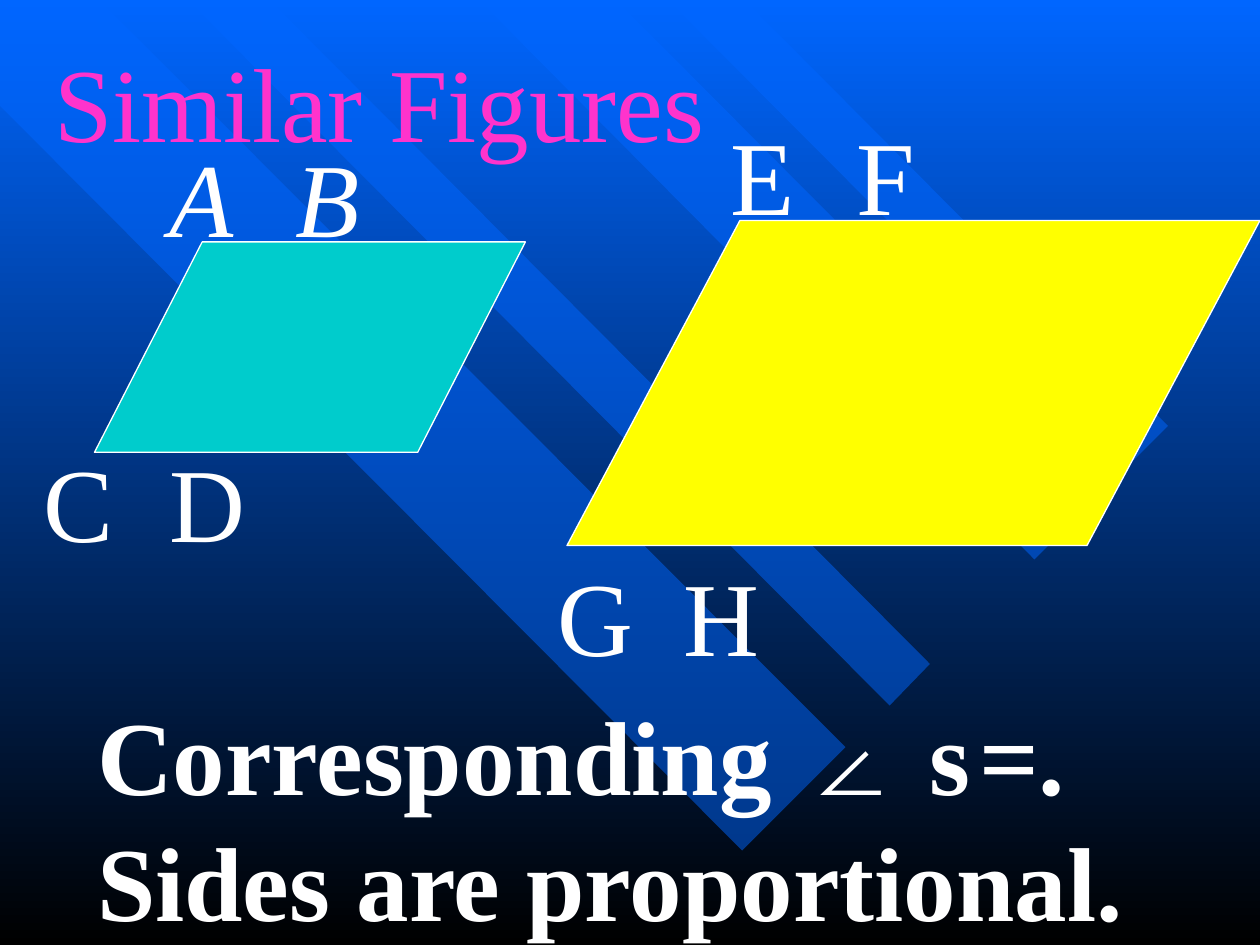
from pptx import Presentation
from pptx.dml.color import RGBColor
from pptx.enum.shapes import MSO_SHAPE
from pptx.enum.text import MSO_ANCHOR, MSO_AUTO_SIZE, PP_ALIGN
from pptx.oxml.ns import qn
from pptx.util import Inches, Pt
from lxml.etree import SubElement

BLUE = RGBColor(0x00, 0x66, 0xFF)
BLACK = RGBColor(0x00, 0x00, 0x00)
PINK = RGBColor(0xFF, 0x33, 0xCC)
TEAL = RGBColor(0x00, 0xCC, 0xCC)
YELLOW = RGBColor(0xFF, 0xFF, 0x00)
WHITE = RGBColor(0xFF, 0xFF, 0xFF)

BANDS = [
    [(6.71, 5.93), (0.79, 0), (0, 0), (0, 0.84), (5.89, 6.75)],
    [(2.14, 0), (7.38, 5.27), (7.06, 5.6), (1.49, 0)],
    [(4.89, 0), (8.76, 3.89), (8.21, 4.44), (3.8, 0)],
    [(5.3, 0), (8.97, 3.68), (9.27, 3.38), (5.91, 0)],
]
LABELS = [
    ("A\tB", (1.25, 1, 3.3, 1.1), 2.59, True),
    ("C\tD", (0.25, 3.42, 3.44, 1.1), 2.64, False),
    ("E\tF", (5.7, 0.83, 4.3, 1.1), 3.63, False),
    ("G\tH", (4.33, 4.33, 4.74, 1.1), 3.94, False),
]


class Painter:
    font = "Times New Roman"
    size = Pt(60)

    def __init__(self, slide):
        self.slide = slide
        self.shapes = slide.shapes

    def backdrop(self, top, base):
        fill = self.slide.background.fill
        fill.gradient()
        fill.gradient_angle = 270
        for stop, color, place in zip(fill.gradient_stops, (top, base), (0, 1)):
            stop.color.rgb = color
            stop.position = place

    def band(self, points):
        spots = [(Inches(x), Inches(y)) for x, y in points]
        pen = self.shapes.build_freeform(*spots[0])
        pen.add_line_segments(spots[1:], close=True)
        shape = pen.convert_to_shape()
        shape.shadow.inherit = False
        shape.fill.solid()
        shape.fill.fore_color.rgb = BLUE
        shape.line.fill.background()
        color = shape._element.spPr.find(qn("a:solidFill"))[0]
        SubElement(color, qn("a:alpha"), val="50000")

    def figure(self, box, skew, color):
        shape = self.shapes.add_shape(MSO_SHAPE.PARALLELOGRAM, *map(Inches, box))
        shape.adjustments[0] = skew
        shape.shadow.inherit = False
        shape.fill.solid()
        shape.fill.fore_color.rgb = color
        shape.line.color.rgb = WHITE
        shape.line.width = Pt(0.75)

    def letter(self, shape, lines, color=WHITE, bold=False, slant=False, tab=None):
        frame = shape.text_frame
        frame.word_wrap = True
        frame.auto_size = MSO_AUTO_SIZE.NONE
        frame.vertical_anchor = MSO_ANCHOR.TOP
        frame.margin_right = 0
        for spot, line in enumerate(lines):
            para = frame.add_paragraph() if spot else frame.paragraphs[0]
            para.alignment = PP_ALIGN.LEFT
            para.line_spacing = 1.0
            para.space_before = Pt(0)
            props = para._p.get_or_add_pPr()
            props.set("marL", "0")
            props.set("indent", "0")
            SubElement(props, qn("a:buNone"))
            if tab:
                stops = SubElement(props, qn("a:tabLst"))
                SubElement(stops, qn("a:tab"), pos=str(Inches(tab)), algn="l")
            run = para.add_run()
            run.text = line
            font = run.font
            font.name, font.size = self.font, self.size
            font.bold, font.italic = bold, slant
            font.color.rgb = color

    def holder(self, shape, box, lines, **style):
        shape.left, shape.top, shape.width, shape.height = map(Inches, box)
        self.shapes._spTree.append(shape._element)
        self.letter(shape, lines, **style)

    def label(self, text, box, tab, slant):
        shape = self.shapes.add_textbox(*map(Inches, box))
        self.letter(shape, [text], tab=tab, slant=slant)


def main():
    deck = Presentation()
    deck.slide_width, deck.slide_height = Inches(10), Inches(7.5)
    slide = deck.slides.add_slide(deck.slide_layouts[1])
    paint = Painter(slide)
    paint.backdrop(BLUE, BLACK)
    for points in BANDS:
        paint.band(points)
    paint.holder(slide.shapes.title, (0.33, 0.25, 5.36, 1.1),
                 ["Similar Figures"], color=PINK)
    paint.figure((0.75, 1.92, 3.42, 1.67), 0.512, TEAL)
    paint.figure((4.5, 1.75, 5.5, 2.58), 0.532, YELLOW)
    for label in LABELS:
        paint.label(*label)
    paint.holder(slide.placeholders[1], (0.67, 5.43, 8.37, 2.1),
                 ["Corresponding ∠ s\t=.", "Sides are proportional."],
                 bold=True, tab=7.32)
    deck.save("out.pptx")


if __name__ == "__main__":
    main()
